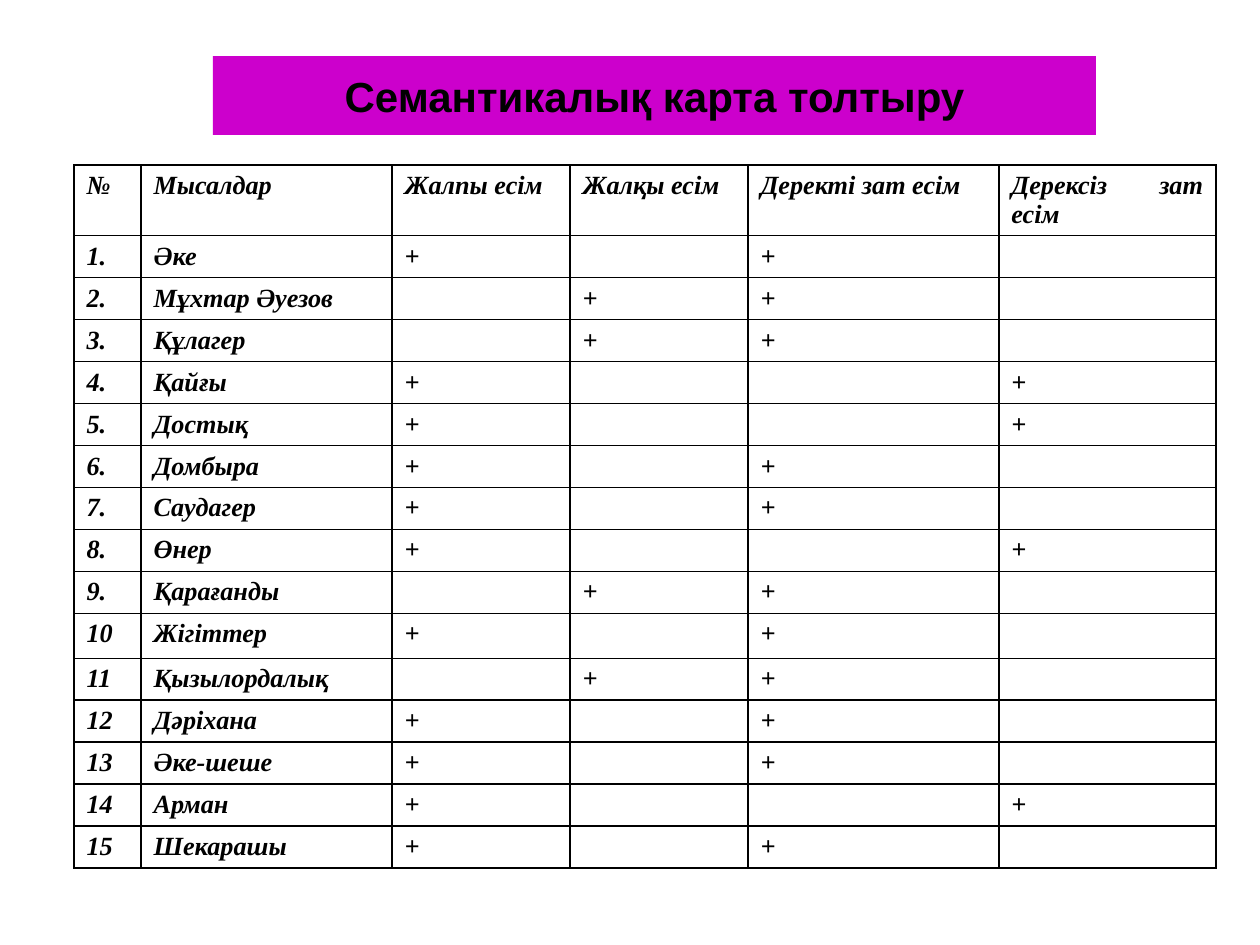
import pptx
import pptx.util
import pptx.dml.color
import pptx.enum.shapes
import pptx.enum.text
import pptx.oxml.ns
import lxml.etree

HEADING = "Семантикалық карта толтыру"
HEADERS = ["№", "Мысалдар", "Жалпы есім", "Жалқы есім", "Деректі зат есім", "Дерексіз зат есім"]
COMMON, PROPER, CONCRETE, ABSTRACT = 2, 3, 4, 5
NOUNS = [
    ("Әке", COMMON, CONCRETE),
    ("Мұхтар Әуезов", PROPER, CONCRETE),
    ("Құлагер", PROPER, CONCRETE),
    ("Қайғы", COMMON, ABSTRACT),
    ("Достық", COMMON, ABSTRACT),
    ("Домбыра", COMMON, CONCRETE),
    ("Саудагер", COMMON, CONCRETE),
    ("Өнер", COMMON, ABSTRACT),
    ("Қарағанды", PROPER, CONCRETE),
    ("Жігіттер", COMMON, CONCRETE),
    ("Қызылордалық", PROPER, CONCRETE),
    ("Дәріхана", COMMON, CONCRETE),
    ("Әке-шеше", COMMON, CONCRETE),
    ("Арман", COMMON, ABSTRACT),
    ("Шекарашы", COMMON, CONCRETE),
]
COLUMN_WIDTHS = [67, 251, 178, 178, 251, 217]
ROW_HEIGHTS = [70] + [42] * 9 + [45] + [42] * 5
TEXT_SIZE = 15


def px(length):
    return pptx.util.Emu(round(length * 914400 / 126))


def colour(value):
    return pptx.dml.color.RGBColor.from_string(value)


def style(paragraph, face, size, align, italic=False):
    paragraph.alignment = align
    font = paragraph.font
    font.name, font.size = face, pptx.util.Pt(size)
    font.bold, font.italic = True, italic
    font.color.rgb = colour("000000")


def add_child(parent, tag, **attributes):
    return lxml.etree.SubElement(parent, pptx.oxml.ns.qn(tag), **attributes)


def outline(cell):
    properties = cell._tc.get_or_add_tcPr()
    for side in ("a:lnL", "a:lnR", "a:lnT", "a:lnB"):
        line = add_child(properties, side, w=str(pptx.util.Pt(1)))
        add_child(add_child(line, "a:solidFill"), "a:srgbClr", val="000000")


def add_heading(slide):
    banner = slide.shapes.add_shape(
        pptx.enum.shapes.MSO_SHAPE.RECTANGLE, px(213), px(56), px(883), px(79))
    banner.shadow.inherit = False
    banner.fill.solid()
    banner.fill.fore_color.rgb = colour("CC00CC")
    banner.line.fill.background()
    frame = banner.text_frame
    frame.word_wrap = True
    frame.vertical_anchor = pptx.enum.text.MSO_ANCHOR.MIDDLE
    frame.text = HEADING
    style(frame.paragraphs[0], "Arial", 24, pptx.enum.text.PP_ALIGN.CENTER)


def add_noun_table(slide):
    rows = [HEADERS]
    for number, (noun, *marks) in enumerate(NOUNS, 1):
        label = f"{number}." if number < 10 else str(number)
        rows.append([label, noun] + ["+" if c in marks else "" for c in range(2, 6)])
    table = slide.shapes.add_table(
        len(rows), len(HEADERS), px(74), px(165),
        px(sum(COLUMN_WIDTHS)), px(sum(ROW_HEIGHTS))).table
    table.first_row = table.horz_banding = False
    for column, width in zip(table.columns, COLUMN_WIDTHS):
        column.width = px(width)
    for row, height, texts in zip(table.rows, ROW_HEIGHTS, rows):
        row.height = px(height)
        for cell, text in zip(row.cells, texts):
            outline(cell)
            cell.fill.background()
            cell.text = text
            paragraph = cell.text_frame.paragraphs[0]
            style(paragraph, "Times New Roman", TEXT_SIZE,
                  pptx.enum.text.PP_ALIGN.JUSTIFY, italic=True)
            if not text:
                add_child(paragraph._p, "a:endParaRPr", sz=str(TEXT_SIZE * 100))


def main():
    presentation = pptx.Presentation()
    presentation.slide_width, presentation.slide_height = px(1260), px(945)
    slide = presentation.slides.add_slide(presentation.slide_layouts[6])
    add_heading(slide)
    add_noun_table(slide)
    presentation.save("out.pptx")


if __name__ == "__main__":
    main()
